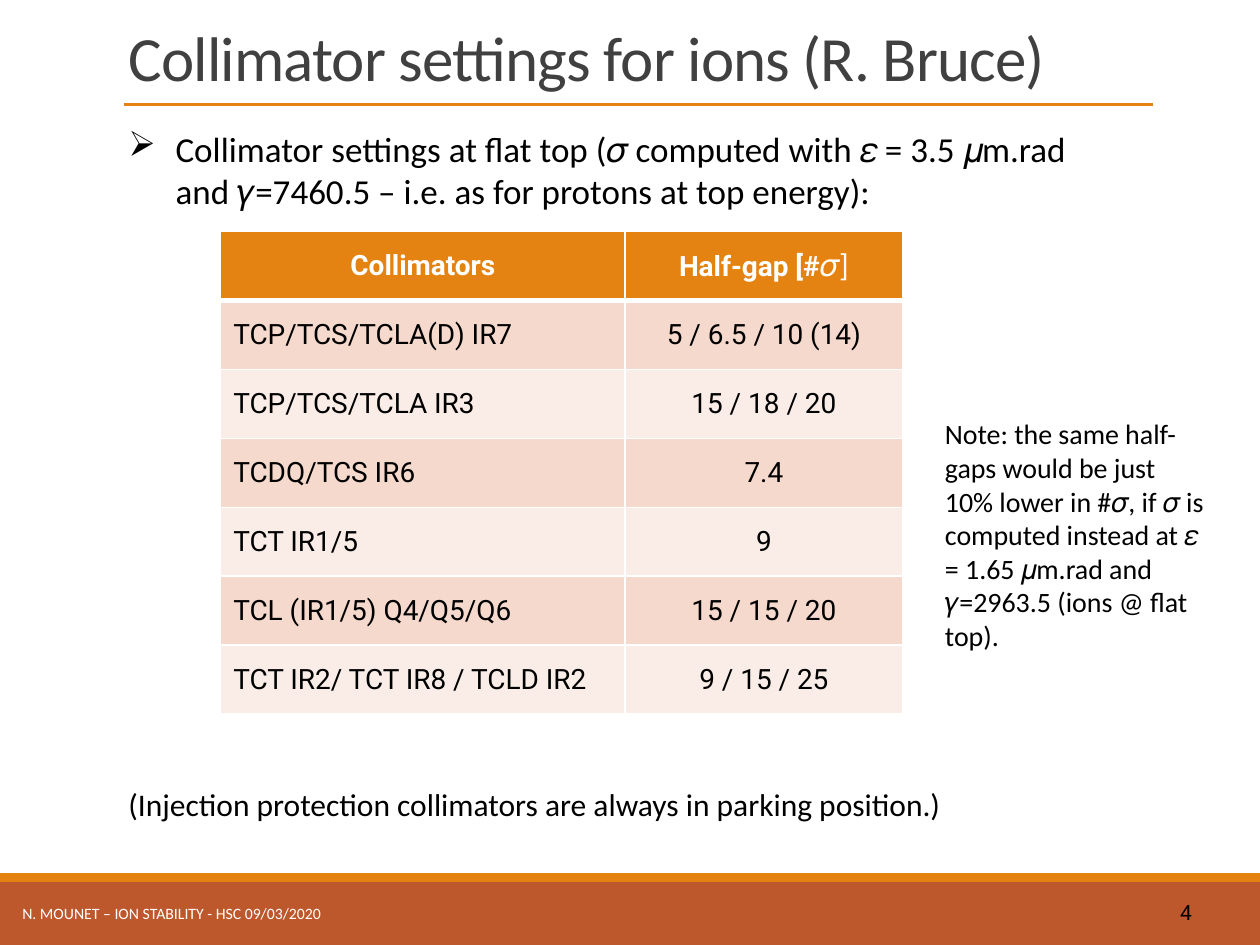
from lxml import etree
from pptx import Presentation
from pptx.dml.color import RGBColor
from pptx.enum.shapes import MSO_CONNECTOR, MSO_SHAPE
from pptx.enum.text import MSO_ANCHOR, PP_ALIGN
from pptx.oxml.ns import qn
from pptx.util import Cm, Pt

LEFT, MID, RIGHT = PP_ALIGN.LEFT, PP_ALIGN.CENTER, PP_ALIGN.RIGHT
TOP, CENTRE, LOW = MSO_ANCHOR.TOP, MSO_ANCHOR.MIDDLE, MSO_ANCHOR.BOTTOM
RECT, LINE = MSO_SHAPE.RECTANGLE, MSO_CONNECTOR.STRAIGHT
HUES = {
    "rust": "BD582C", "orange": "E48312", "grey": "404040", "black": "000000",
    "white": "FFFFFF", "dark": "F5D9CC", "pale": "FAEDE7",
}


def hue(name):
    return RGBColor.from_string(HUES[name])


def write(frame, text, size=16, font="Calibri", color="black", bold=False,
          align=LEFT, anchor=TOP, wrap=True):
    """Add a run to the first paragraph of the frame."""
    frame.word_wrap = wrap
    frame.vertical_anchor = anchor
    para = frame.paragraphs[0]
    para.alignment = align
    run = para.add_run()
    run.text = text
    run.font.size = Pt(size)
    run.font.name = font
    run.font.bold = bold
    run.font.color.rgb = hue(color)
    return run


deck = Presentation()
deck.slide_width, deck.slide_height = Cm(25.4), Cm(19.05)
slide = deck.slides.add_slide(deck.slide_layouts[6])
shapes = slide.shapes

# Footer bands
for top, high, color in [(17.78, 1.27, "rust"), (17.6, 0.18, "orange")]:
    band = shapes.add_shape(RECT, 0, Cm(top), Cm(25.4), Cm(high))
    band.shadow.inherit = False
    band.fill.solid()
    band.fill.fore_color.rgb = hue(color)
    band.line.fill.background()

# Rule under the title
rule = shapes.add_connector(LINE, Cm(2.49), Cm(2.11), Cm(23.24), Cm(2.11))
rule.line.color.rgb = hue("orange")
rule.line.width = Pt(1.5)
etree.SubElement(rule._element.spPr, qn("a:effectLst"))

# Slide number
frame = shapes.add_textbox(Cm(23.44), Cm(18.03), Cm(0.69), Cm(0.61)).text_frame
frame.margin_left = frame.margin_right = Cm(0.1)
frame.margin_top = frame.margin_bottom = Cm(0.1)
write(frame, "4", size=12, font="Roboto", align=RIGHT, wrap=False)

# Footer text
frame = shapes.add_textbox(Cm(0.2), Cm(17.96), Cm(15.24), Cm(0.89)).text_frame
run = write(frame, "N. MOUNET – ION STABILITY - HSC 09/03/2020", size=9,
            color="white", anchor=CENTRE)

# Title
frame = shapes.add_textbox(Cm(2.34), 0, Cm(22.23), Cm(2.03)).text_frame
run = write(frame, "Collimator settings for ions (R. Bruce)", size=36,
            color="grey", anchor=LOW)
run._r.get_or_add_rPr().set("spc", "-50")
frame.paragraphs[0].line_spacing = 0.85

# Bullet
frame = shapes.add_textbox(Cm(2.34), Cm(2.44), Cm(21.16), Cm(1.96)).text_frame
para = frame.paragraphs[0]
para.space_after = Pt(6)
props = para._p.get_or_add_pPr()
props.set("marL", str(Cm(0.95)))
props.set("indent", str(-Cm(0.95)))
etree.SubElement(props, qn("a:buChar"), char="➢")
write(frame, "Collimator settings at flat top (𝜎 computed with 𝜀 = 3.5 𝜇m.rad "
      "and 𝛾=7460.5 – i.e. as for protons at top energy):", size=20)

# Table of half-gaps
rows = [
    ("Collimators", "Half-gap [#"),
    ("TCP/TCS/TCLA(D) IR7", "5 / 6.5 / 10 (14)"),
    ("TCP/TCS/TCLA IR3", "15 / 18 / 20"),
    ("TCDQ/TCS IR6", "7.4"),
    ("TCT IR1/5", "9"),
    ("TCL (IR1/5) Q4/Q5/Q6", "15 / 15 / 20"),
    ("TCT IR2/ TCT IR8 / TCLD IR2", "9 / 15 / 25"),
]
table = shapes.add_table(len(rows), 2, Cm(4.45), Cm(4.67),
                         Cm(13.75), Cm(9.73)).table
table.columns[0].width, table.columns[1].width = Cm(8.15), Cm(5.6)
for r, row in enumerate(rows):
    table.rows[r].height = Cm(1.39)
    head = r == 0
    for c, text in enumerate(row):
        cell = table.cell(r, c)
        cell.fill.solid()
        cell.fill.fore_color.rgb = hue(
            "orange" if head else "dark" if r % 2 else "pale")
        cell.vertical_anchor = CENTRE
        write(cell.text_frame, text, font="Roboto", bold=head,
              color="white" if head else "black",
              align=MID if head or c else LEFT, anchor=CENTRE)
        # White borders, thick around the line below the header
        for i, side in enumerate(["lnL", "lnR", "lnT", "lnB"]):
            thick = (r, side) in [(0, "lnB"), (1, "lnT")]
            edge = etree.Element(qn("a:" + side), w=str(Pt(3 if thick else 1)))
            fill = etree.SubElement(edge, qn("a:solidFill"))
            etree.SubElement(fill, qn("a:srgbClr"), val=HUES["white"])
            cell._tc.get_or_add_tcPr().insert(i, edge)
write(table.cell(0, 1).text_frame, "𝜎]", size=18, color="white",
      align=MID, anchor=CENTRE)

# Remarks
frame = shapes.add_textbox(Cm(2.34), Cm(15.7), Cm(22.63), Cm(1.02)).text_frame
write(frame, "(Injection protection collimators are always in parking "
      "position.)", size=18)
frame = shapes.add_textbox(Cm(18.8), Cm(8.28), Cm(5.72), Cm(5.05)).text_frame
write(frame, "Note: the same half-gaps would be just 10% lower in #𝜎, if 𝜎 is "
      "computed instead at 𝜀 = 1.65 𝜇m.rad and 𝛾=2963.5 (ions @ flat top).")

deck.save("out.pptx")
